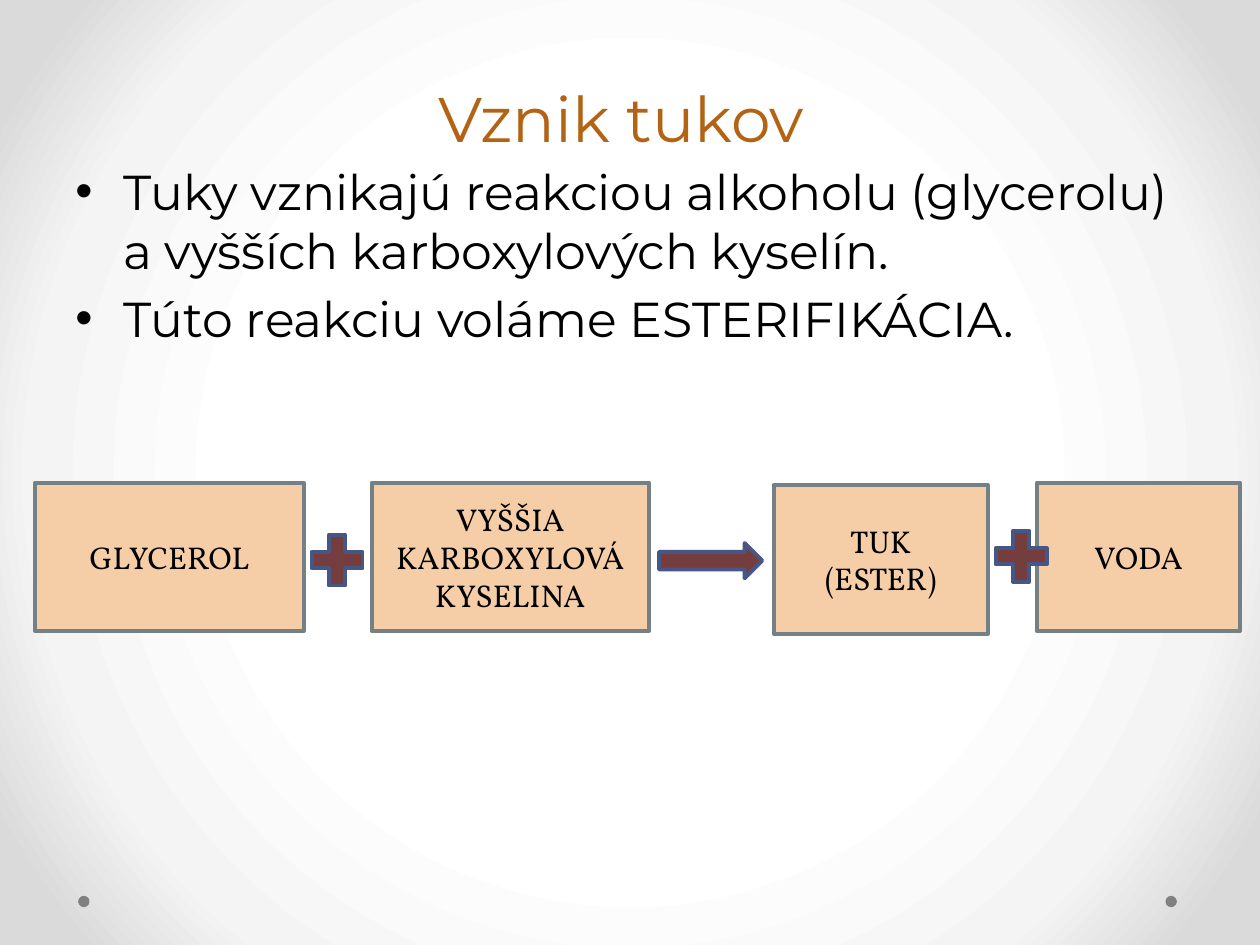
from lxml import etree
from pptx import Presentation
from pptx.dml.color import RGBColor
from pptx.enum.shapes import MSO_SHAPE
from pptx.enum.text import MSO_ANCHOR, PP_ALIGN
from pptx.oxml import parse_xml
from pptx.oxml.ns import nsdecls, qn
from pptx.util import Inches, Pt

RECT, OVAL = MSO_SHAPE.RECTANGLE, MSO_SHAPE.OVAL
PLUS, ARROW = MSO_SHAPE.MATH_PLUS, MSO_SHAPE.RIGHT_ARROW
TOP, MID, BOTTOM = MSO_ANCHOR.TOP, MSO_ANCHOR.MIDDLE, MSO_ANCHOR.BOTTOM
LEFT, CENTER = PP_ALIGN.LEFT, PP_ALIGN.CENTER

BLACK = RGBColor(0x00, 0x00, 0x00)
BROWN = RGBColor(0xB2, 0x63, 0x14)
PEACH = RGBColor(0xF5, 0xCE, 0xA7)
SLATE = RGBColor(0x75, 0x80, 0x85)
MAROON = RGBColor(0x75, 0x3D, 0x3D)
BLUE = RGBColor(0x47, 0x57, 0x85)
GRAY = RGBColor(0x80, 0x80, 0x80)
SANS, SERIF = "Montserrat", "Vollkorn"

# Content
TITLE = ["Vznik tukov"]
POINTS = [
    "Tuky vznikajú reakciou alkoholu (glycerolu) a vyšších karboxylových kyselín.",
    "Túto reakciu voláme ESTERIFIKÁCIA.",
]
BOX_H = 1.18
BOXES = [  # lines, left, top, width
    (["GLYCEROL"], 0.28, 3.83, 2.13),
    (["VYŠŠIA KARBOXYLOVÁ KYSELINA"], 2.95, 3.83, 2.2),
    (["TUK", "(ESTER)"], 6.14, 3.85, 1.7),
    (["VODA"], 8.23, 3.83, 1.61),
]
SIGNS = [  # shape, left, top, width, height
    (PLUS, 2.4, 4.17, 0.55, 0.55),
    (PLUS, 7.83, 4.14, 0.55, 0.55),
    (ARROW, 5.23, 4.31, 0.82, 0.28),
]
DOTS = [9.25, 0.62]
STOPS = [(50, "FFFFFF"), (76, "F4F4F4"), (92, "DADADA")]


def paint_back(slide):
    """Give the slide a round gradient from its centre."""
    stops = "".join(
        f'<a:gs pos="{pos * 1000}"><a:srgbClr val="{tint}"/></a:gs>'
        for pos, tint in STOPS
    )
    back = parse_xml(
        f'<p:bg {nsdecls("p", "a")}><p:bgPr><a:gradFill rotWithShape="1">'
        f'<a:gsLst>{stops}</a:gsLst><a:path path="circle">'
        '<a:fillToRect l="50000" t="50000" r="50000" b="50000"/></a:path>'
        "</a:gradFill><a:effectLst/></p:bgPr></p:bg>"
    )
    slide.element.cSld.insert(0, back)


def add_bullet(para):
    props = para._p.get_or_add_pPr()
    props.set("marL", str(Inches(0.38)))
    props.set("indent", str(-Inches(0.38)))
    etree.SubElement(props, qn("a:buFont")).set("typeface", "Arial")
    etree.SubElement(props, qn("a:buChar")).set("char", "•")


def put_text(shape, lines, size, font, color=BLACK, align=CENTER, anchor=MID,
             bullet=False, gap=0, pitch=None):
    frame = shape.text_frame
    frame.word_wrap = True
    frame.vertical_anchor = anchor
    for i, line in enumerate(lines):
        para = frame.add_paragraph() if i else frame.paragraphs[0]
        if bullet:
            add_bullet(para)
        para.alignment = align
        if i and gap:
            para.space_before = Pt(gap)
        if pitch:
            para.line_spacing = Pt(pitch)
        run = para.add_run()
        run.text = line
        run.font.size = Pt(size)
        run.font.name = font
        run.font.color.rgb = color


def add_form(slide, kind, left, top, width, height, fill, edge=None):
    form = slide.shapes.add_shape(
        kind, Inches(left), Inches(top), Inches(width), Inches(height))
    form.shadow.inherit = False
    form.fill.solid()
    form.fill.fore_color.rgb = fill
    if edge is None:
        form.line.fill.background()
    else:
        form.line.color.rgb = edge
        form.line.width = Pt(2.25)
    return form


def add_label(slide, left, top, width, height):
    return slide.shapes.add_textbox(
        Inches(left), Inches(top), Inches(width), Inches(height))


def main():
    prs = Presentation()
    prs.slide_width, prs.slide_height = Inches(10), Inches(7.5)
    slide = prs.slides.add_slide(prs.slide_layouts[6])
    paint_back(slide)

    # Footer dots
    for left in DOTS:
        add_form(slide, OVAL, left, 7.11, 0.09, 0.09, GRAY)

    # Title and bullet points
    put_text(add_label(slide, 0.43, 0.21, 9, 1.07), TITLE, 36, SANS,
             color=BROWN, anchor=BOTTOM, pitch=58)
    put_text(add_label(slide, 0.5, 1.23, 9, 2.68), POINTS, 28, SANS,
             align=LEFT, anchor=TOP, bullet=True, gap=5.6)

    # Reaction: substances, then the signs between them
    for lines, left, top, width in BOXES:
        box = add_form(slide, RECT, left, top, width, BOX_H, PEACH, SLATE)
        put_text(box, lines, 18, SERIF)
    for kind, *place in SIGNS:
        add_form(slide, kind, *place, MAROON, BLUE)

    prs.save("out.pptx")


if __name__ == "__main__":
    main()
